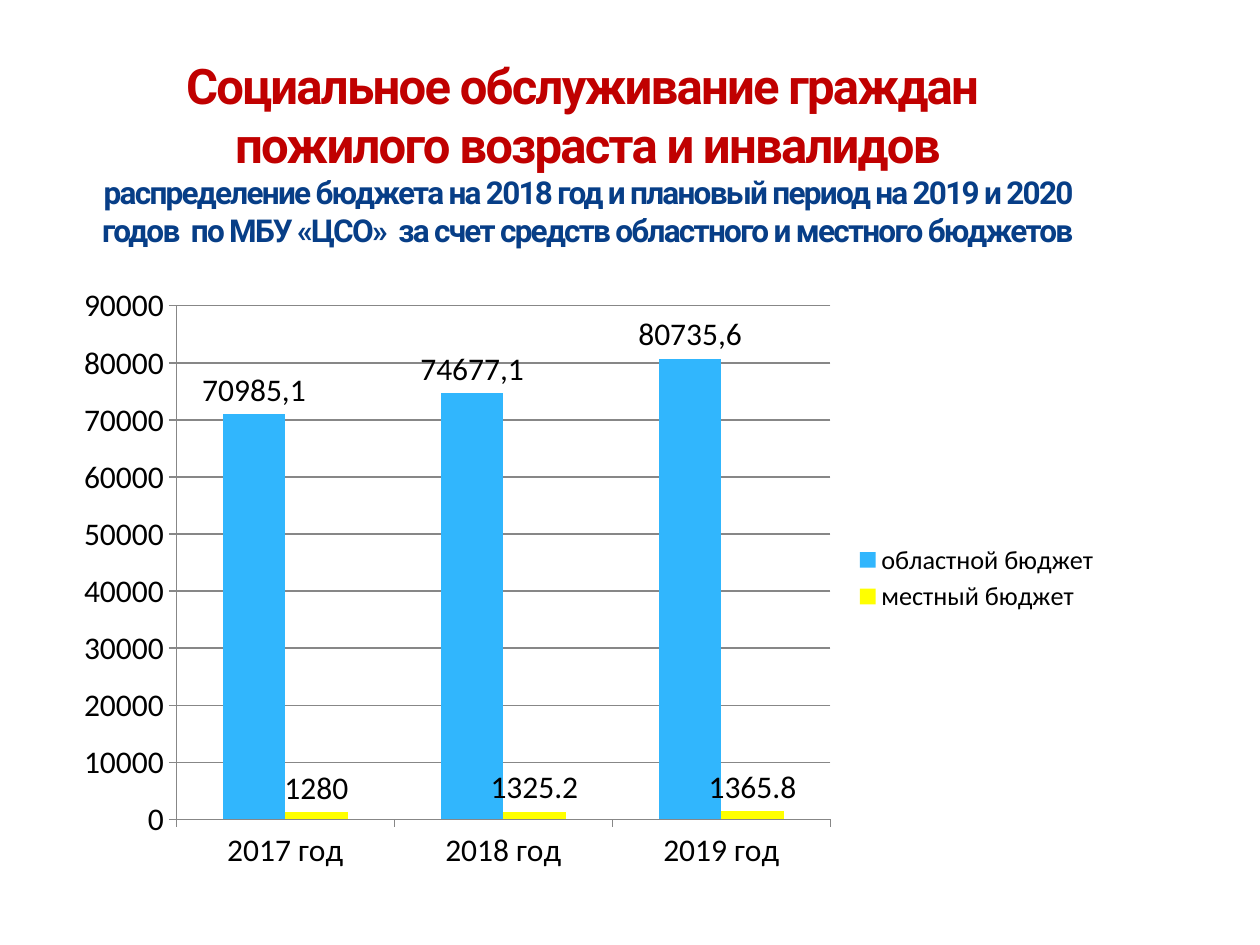
"""Builds a slide on the social service budget with a clustered column chart."""
from pptx import Presentation
from pptx.chart.data import CategoryChartData
from pptx.dml.color import RGBColor
from pptx.enum.chart import XL_CHART_TYPE as ChartType
from pptx.enum.chart import XL_LABEL_POSITION as LabelPosition
from pptx.enum.chart import XL_LEGEND_POSITION as LegendPosition
from pptx.enum.chart import XL_TICK_MARK as TickMark
from pptx.enum.text import MSO_ANCHOR as Anchor
from pptx.enum.text import PP_ALIGN as Align
from pptx.util import Inches, Pt

COLORS = {
    "heading": "C00000",
    "subheading": "073E87",
    "text": "000000",
    "regional": "31B6FD",
    "local": "FFFF00",
    "line": "878787",
}
YEARS = ["2017 год", "2018 год", "2019 год"]
REGIONAL = [70985.1, 74677.1, 80735.6]
LOCAL = [1280, 1325.2, 1365.8]
HEADING = "Социальное обслуживание граждан \vпожилого возраста и инвалидов\v"
SUBHEADING = (
    "распределение бюджета на 2018 год и плановый период на 2019 и 2020 годов  "
    "по МБУ «ЦСО»  за счет средств областного и местного бюджетов"
)


class BudgetSlide:
    """Holds the style and the current slide."""

    title_font = "Roboto"
    chart_font = "Calibri"

    def __init__(self, presentation):
        self.slide = presentation.slides.add_slide(presentation.slide_layouts[5])

    def color(self, name):
        return RGBColor.from_string(COLORS[name])

    def format_font(self, font, color="text", **values):
        for name, value in values.items():
            setattr(font, name, value)
        font.color.rgb = self.color(color)

    def add_title(self, box, parts):
        title = self.slide.shapes.title
        for name, value in zip(("left", "top", "width", "height"), box):
            setattr(title, name, Inches(value))
        frame = title.text_frame
        frame.word_wrap = True
        frame.vertical_anchor = Anchor.MIDDLE
        paragraph = frame.paragraphs[0]
        paragraph.alignment = Align.CENTER
        for text, size, color in parts:
            for index, line in enumerate(text.split("\v")):
                if index:
                    paragraph.add_line_break()
                if line:
                    run = paragraph.add_run()
                    run.text = line
                    self.format_font(run.font, color, name=self.title_font,
                                     size=Pt(size), bold=True)
                    run.font._element.set("spc", "-100")

    def add_chart(self, box, categories, series):
        data = CategoryChartData()
        data.categories = categories
        for name, values, _ in series:
            data.add_series(name, values)
        chart = self.slide.shapes.add_chart(
            ChartType.COLUMN_CLUSTERED, *map(Inches, box), data).chart
        self.format_font(chart.font, name=self.chart_font, size=Pt(18))
        chart.has_title = False
        chart.has_legend = True
        chart.legend.position = LegendPosition.RIGHT
        chart.legend.include_in_layout = False
        self.format_font(chart.legend.font, name=self.chart_font, size=Pt(15))
        plot = chart.plots[0]
        plot.gap_width = 150
        plot.overlap = 0
        plot.vary_by_categories = False
        for item, (_, _, color) in zip(plot.series, series):
            item.format.fill.solid()
            item.format.fill.fore_color.rgb = self.color(color)
            item.invert_if_negative = False
            item.data_labels.show_value = True
            item.data_labels.position = LabelPosition.OUTSIDE_END
        self.format_axes(chart)
        return chart

    def format_axes(self, chart):
        value_axis = chart.value_axis
        values = {"minimum_scale": 0, "maximum_scale": 90000, "major_unit": 10000,
                  "has_major_gridlines": True}
        for name, value in values.items():
            setattr(value_axis, name, value)
        for axis in (chart.category_axis, value_axis):
            axis.major_tick_mark = TickMark.OUTSIDE
            axis.format.line.color.rgb = self.color("line")
        value_axis.major_gridlines.format.line.color.rgb = self.color("line")

    def write_point_labels(self, series, texts):
        for index, text in enumerate(texts):
            label = series.points[index].data_label
            label.text_frame.text = text
            label.position = LabelPosition.OUTSIDE_END
            run = label.text_frame.paragraphs[0].runs[0]
            self.format_font(run.font, name=self.chart_font, size=Pt(18))


def main():
    presentation = Presentation()
    presentation.slide_width = Inches(10)
    presentation.slide_height = Inches(7.5)
    budget = BudgetSlide(presentation)
    budget.add_title((0.5, 0.3, 8.33, 1.81),
                     [(HEADING, 28, "heading"), (SUBHEADING, 18, "subheading")])
    chart = budget.add_chart(
        (0.5, 2.18, 8.33, 4.82), YEARS,
        [("областной бюджет", REGIONAL, "regional"), ("местный бюджет", LOCAL, "local")])
    budget.write_point_labels(chart.plots[0].series[0],
                              [str(value).replace(".", ",") for value in REGIONAL])
    presentation.save("out.pptx")


if __name__ == "__main__":
    main()
